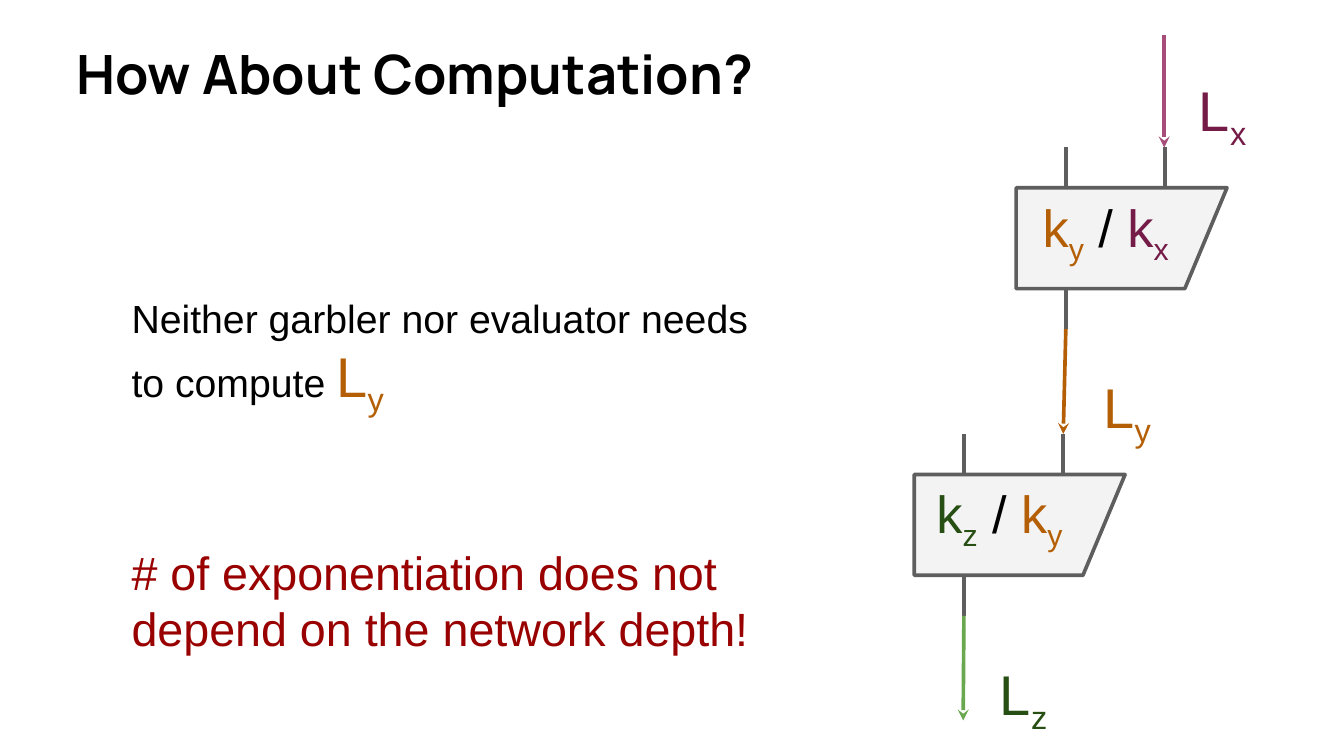
"""Build the slide on computation across a chain of two gates."""
from pptx import Presentation
from pptx.dml.color import RGBColor
from pptx.enum import shapes, text
from pptx.oxml import ns
from pptx.util import Pt
from lxml import etree

BLACK = RGBColor(0x00, 0x00, 0x00)
RED = RGBColor(0x99, 0x00, 0x00)
GRAY = RGBColor(0x5E, 0x5E, 0x5E)
PALE = RGBColor(0xF3, 0xF3, 0xF3)
PLUM, PINK = RGBColor(0x74, 0x1B, 0x47), RGBColor(0xA6, 0x4D, 0x79)
ORANGE = RGBColor(0xB4, 0x5F, 0x06)
DARK_GREEN, GREEN = RGBColor(0x27, 0x4E, 0x13), RGBColor(0x6A, 0xA8, 0x4F)

GATE_W, GATE_H, PIN = 113, 54, 21.7
PIN_LEFT, PIN_RIGHT = 26.6, 79.8
LINE_W = 1.97


def write(sp, runs, size, font="Arial", bold=False, spacing=None, inset=7.2, grow=True):
    """Fill a shape with runs given as (text, colour, options)."""
    tf = sp.text_frame
    tf.word_wrap = True
    tf.auto_size = text.MSO_AUTO_SIZE.SHAPE_TO_FIT_TEXT if grow else text.MSO_AUTO_SIZE.NONE
    tf.vertical_anchor = text.MSO_ANCHOR.TOP
    tf.margin_left = tf.margin_right = tf.margin_top = tf.margin_bottom = Pt(inset)
    p = tf.paragraphs[0]
    p.alignment = text.PP_ALIGN.LEFT
    if spacing:
        p.line_spacing = spacing
    for words, color, *options in runs:
        r = p.add_run()
        r.text = words
        r.font.name, r.font.bold = font, bold
        r.font.size = Pt(30 if "large" in options else size)
        r.font.color.rgb = color
        if "sub" in options:
            r._r.get_or_add_rPr().set("baseline", "-25000")


def place(sp, left, top, width, height):
    """Set the position and size of a shape."""
    sp.left, sp.top, sp.width, sp.height = Pt(left), Pt(top), Pt(width), Pt(height)


def add_text(slide, box, runs, size, **fmt):
    """Add a text box."""
    sp = slide.shapes.add_textbox(*map(Pt, box))
    write(sp, runs, size, **fmt)


def add_line(slide, x1, y1, x2, y2, color=GRAY, arrow=False):
    """Add a straight line, with an arrowhead at its end if asked."""
    sp = slide.shapes.add_connector(shapes.MSO_CONNECTOR.STRAIGHT, Pt(x1), Pt(y1), Pt(x2), Pt(y2))
    sp.line.color.rgb = color
    sp.line.width = Pt(LINE_W)
    if arrow:
        etree.SubElement(sp.line._get_or_add_ln(), ns.qn("a:tailEnd"), type="stealth")
    etree.SubElement(sp._element.spPr, ns.qn("a:effectLst"))


def subscripted(letter, index, color):
    """Return the runs of a letter with a subscript."""
    return [(letter, color), (index, color, "sub")]


def add_gate(slide, x, y, label_box, over, under):
    """Add a gate with its three pins and its quotient of keys."""
    sp = slide.shapes.add_shape(
        shapes.MSO_SHAPE.FLOWCHART_MANUAL_INPUT,
        Pt(x + (GATE_W - GATE_H) / 2), Pt(y - (GATE_W - GATE_H) / 2), Pt(GATE_H), Pt(GATE_W))
    sp.rotation = 90
    sp._element.spPr.xfrm.set("flipH", "1")
    sp.shadow.inherit = False
    sp.fill.solid()
    sp.fill.fore_color.rgb = PALE
    sp.line.color.rgb = GRAY
    sp.line.width = Pt(LINE_W)
    for dx, top in ((PIN_LEFT, y + GATE_H), (PIN_LEFT, y - PIN), (PIN_RIGHT, y - PIN)):
        add_line(slide, x + dx, top, x + dx, top + PIN)
    runs = subscripted("k", *over) + [(" / ", BLACK)] + subscripted("k", *under)
    add_text(slide, label_box, runs, 28)


def main():
    """Build and save the slide."""
    prs = Presentation()
    prs.slide_width, prs.slide_height = Pt(720), Pt(405)
    slide = prs.slides.add_slide(prs.slide_layouts[5])

    title = slide.shapes.title
    place(title, 33.8, 9.4, 559.4, 49.7)
    write(title, [("How About Computation?", BLACK)], 29, font="Manrope", bold=True, spacing=1.15)

    x, y, z = ("x", PLUM), ("y", ORANGE), ("z", DARK_GREEN)
    add_gate(slide, 489.8, 254.2, (494.6, 250.6, 100.1, 65.5), z, y)
    add_gate(slide, 544.4, 100.6, (551.5, 97.2, 87.8, 65.5), y, x)

    add_line(slide, 571, 176.3, 569.6, 232.5, ORANGE, arrow=True)
    add_line(slide, 623.7, 18.7, 623.7, 79, PINK, arrow=True)
    add_line(slide, 516.4, 329.9, 516, 386, GREEN, arrow=True)

    for box, index in (((635.8, 13.7, 63.4, 69.8), x),
                       ((584.6, 172.8, 39.6, 69.8), y),
                       ((529.2, 326.2, 49.7, 59.8), z)):
        add_text(slide, box, subscripted("L", *index), 30, spacing=1.5, inset=6.5, grow=False)

    add_text(slide, (63.4, 284.4, 365, 74.9),
             [("# of exponentiation does not depend on the network depth!", RED)], 25)
    add_text(slide, (63.4, 150.5, 350.6, 95),
             [("Neither garbler nor evaluator needs to compute ", BLACK),
              ("L", ORANGE, "large"), ("y", ORANGE, "large", "sub")], 21)
    prs.save("out.pptx")


if __name__ == "__main__":
    main()
